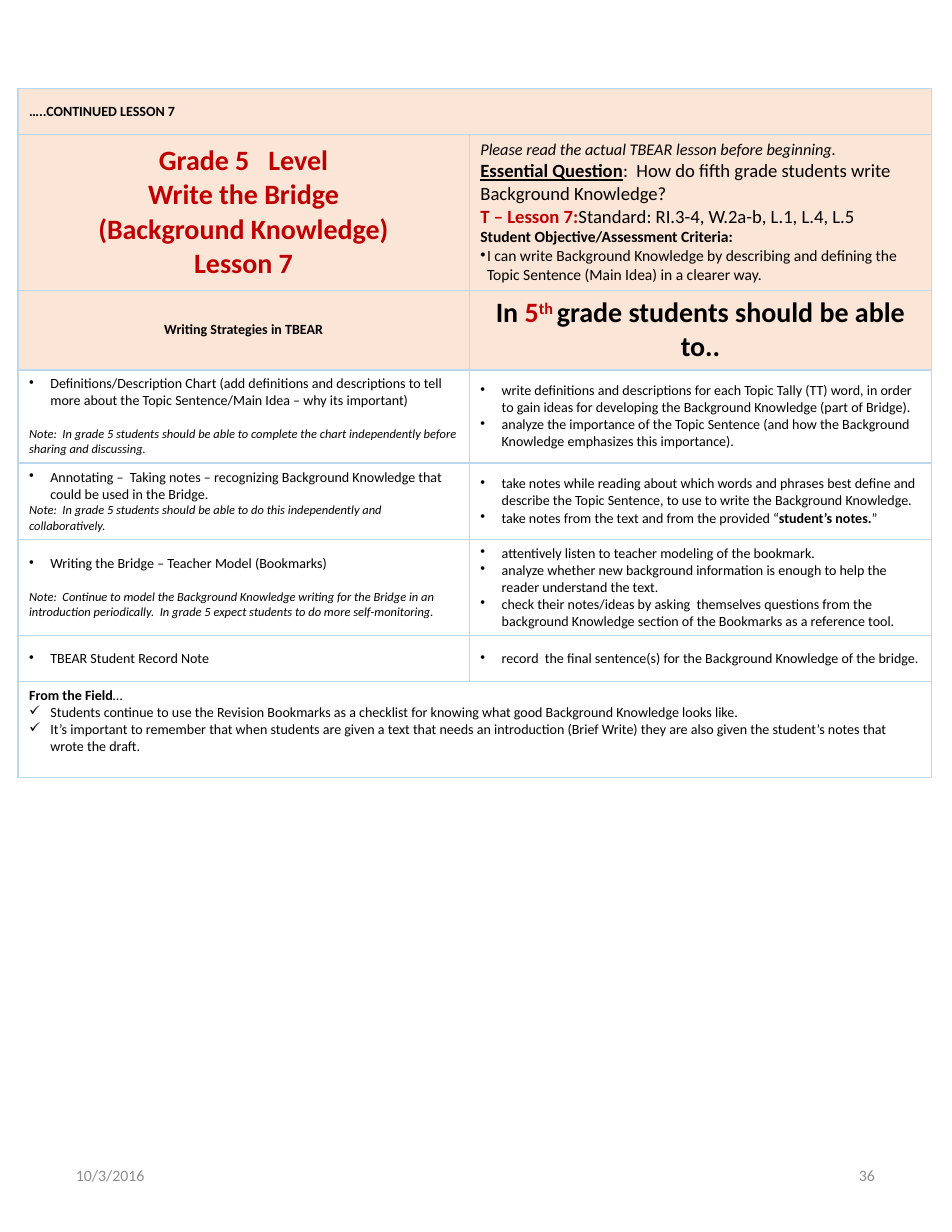
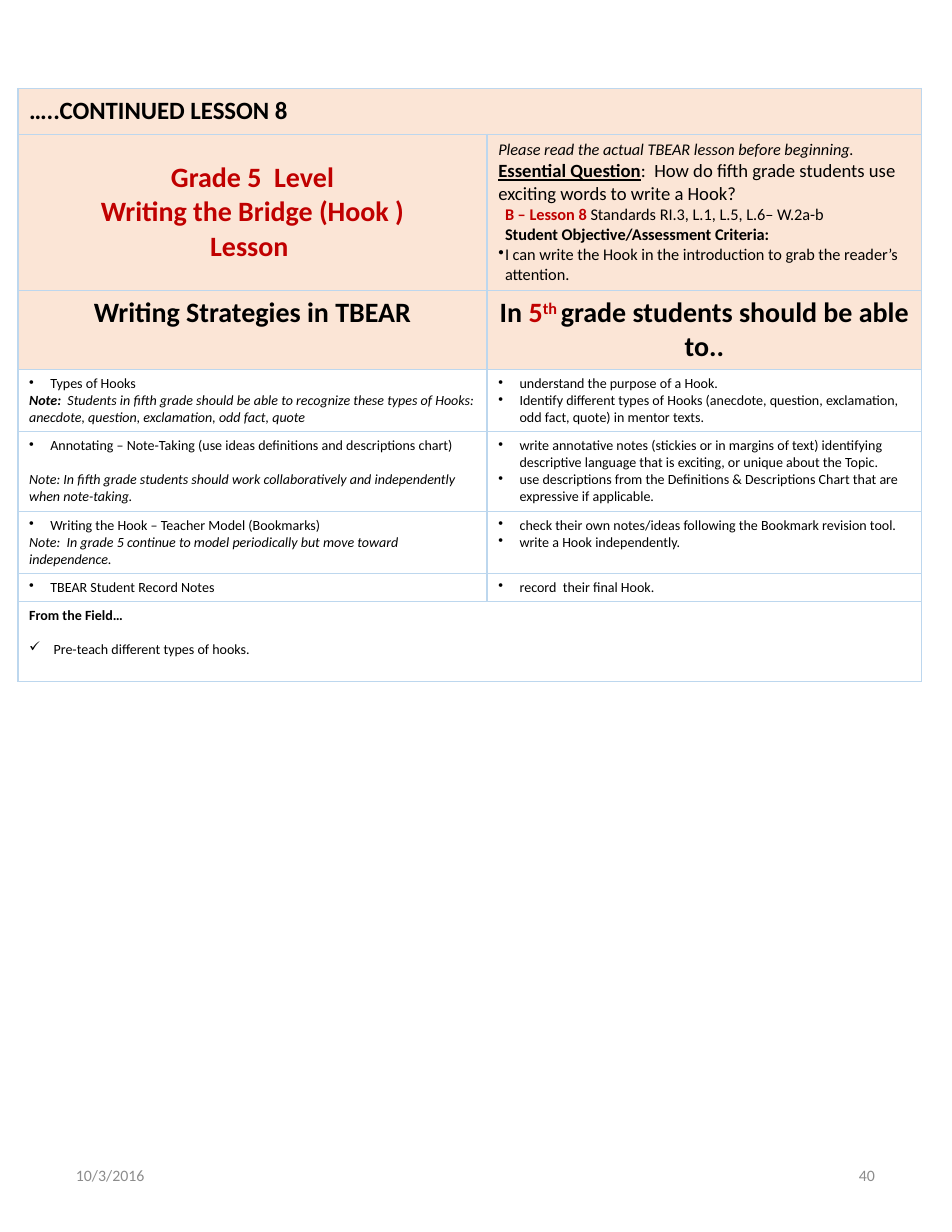
import pptx
import pptx.util
import pptx.oxml
import pptx.oxml.ns
import pptx.dml.color
import pptx.enum.text
import lxml.etree

Pt = pptx.util.Pt
Inches = pptx.util.Inches
RGBColor = pptx.dml.color.RGBColor
ALIGN = pptx.enum.text.PP_ALIGN
ANCHOR = pptx.enum.text.MSO_ANCHOR
qn = pptx.oxml.ns.qn

BLACK = RGBColor(0x00, 0x00, 0x00)
RED = RGBColor(0xC0, 0x00, 0x00)
GREY = RGBColor(0x8C, 0x8C, 0x8C)
PEACH = RGBColor(0xFB, 0xE5, 0xD6)
WHITE = RGBColor(0xFF, 0xFF, 0xFF)
BORDER = RGBColor(0xBD, 0xD7, 0xEE)

FONT = "Calibri"
PAGE_W, PAGE_H = Inches(8.5), Inches(11)
HEADER_ROWS = 3
HEADER_HEIGHTS = [3.73, 12.66, 6.45]
HANG = 0.19
LINE = 11


def col(n):
    return int(PAGE_W * n / 100)


def row(n):
    return int(PAGE_H * n / 100)


def run(text, **fmt):
    return text, fmt


def para(*runs, **fmt):
    return runs, fmt


def bullet(*runs, mark="•", left=HANG, **fmt):
    return para(*runs, mark=mark, left=left, first=-left, **fmt)


def check(text, **fmt):
    return bullet(text, mark="✓", **fmt)


def note(*runs, size=9, **fmt):
    return para(*runs, size=size, italic=True, **fmt)


def heading(*runs, size=18, **fmt):
    return para(*runs, size=size, bold=True, align=ALIGN.CENTER, **fmt)


def add_run(p, text, size=9, color=BLACK, bold=False, italic=False,
            underline=False, raised=False):
    r = p.add_run()
    r.text = text
    f = r.font
    f.name, f.size, f.bold, f.italic = FONT, Pt(size), bold, italic
    f.underline = underline
    f.color.rgb = color
    if raised:
        r._r.get_or_add_rPr().set("baseline", "30000")


def add_para(p, runs, align=ALIGN.LEFT, mark=None, left=0, first=0, before=0, **fmt):
    p.alignment = align
    p.space_before = Pt(before)
    pPr = p._p.get_or_add_pPr()
    pPr.set("marL", str(Inches(left)))
    pPr.set("indent", str(Inches(first)))
    if mark:
        lxml.etree.SubElement(pPr, qn("a:buChar")).set("char", mark)
    for item in runs:
        text, own = run(item) if isinstance(item, str) else item
        add_run(p, text, **{**fmt, **own})


def write(tf, paras):
    for i, (runs, fmt) in enumerate(paras):
        p = tf.add_paragraph() if i else tf.paragraphs[0]
        add_para(p, runs, **fmt)


def style_cell(cell, color):
    cell.fill.solid()
    cell.fill.fore_color.rgb = color
    tcPr = cell._tc.get_or_add_tcPr()
    for i, side in enumerate("LRTB"):
        ln = pptx.oxml.parse_xml(
            f'<a:ln{side} {pptx.oxml.ns.nsdecls("a")} w="{Pt(1)}"><a:solidFill>'
            f'<a:srgbClr val="{BORDER}"/></a:solidFill></a:ln{side}>')
        tcPr.insert(i, ln)


def lesson_table(s, box, split, heights, content, top_cells):
    x, y, w = box
    shape = s.shapes.add_table(len(content), 2, col(x), row(y), col(w), row(sum(heights)))
    table = shape.table
    table.first_row = table.horz_banding = False
    table.columns[0].width = col(split)
    table.columns[1].width = col(w - split)
    for i, (height, texts) in enumerate(zip(heights, content)):
        table.rows[i].height = row(height)
        for cell in table.rows[i].cells:
            style_cell(cell, PEACH if i < HEADER_ROWS else WHITE)
        if len(texts) == 1:
            table.cell(i, 0).merge(table.cell(i, 1))
        for j, paras in enumerate(texts):
            cell = table.cell(i, j)
            cell.vertical_anchor = ANCHOR.TOP if (i, j) in top_cells else ANCHOR.MIDDLE
            write(cell.text_frame, paras)


def footer(s, box, date, number):
    x, y, w, h = box
    part = 22.47
    for left, text, align in ((x, date, ALIGN.LEFT), (x + w - part, number, ALIGN.RIGHT)):
        tf = s.shapes.add_textbox(col(left), row(y), col(part), row(h)).text_frame
        tf.word_wrap = True
        tf.vertical_anchor = ANCHOR.MIDDLE
        write(tf, [para(text, size=10.2, color=GREY, align=align)])


def title_lines(*lines):
    return [heading(line, color=RED) for line in lines]


def question(text):
    return [
        note("Please read the actual TBEAR lesson before beginning.", size=10.5),
        para(run("Essential Question", bold=True, underline=True), ":  " + text, size=12),
    ]


def lesson_slide(prs, number, width, split, heights, content, top_cells):
    s = prs.slides.add_slide(prs.slide_layouts[6])
    lesson_table(s, (1.88, 7.18, width), split, HEADER_HEIGHTS + heights, content, top_cells)
    footer(s, (6.82, 92.73, 86.24, 5.36), "10/3/2016", number)


STRATEGIES = "Writing Strategies in TBEAR"
OBJECTIVE = "Student Objective/Assessment Criteria:"
EXPECTED = [heading("In ", run("5", color=RED), run("th ", color=RED, raised=True),
                    "grade students should be able to..")]

BACKGROUND_LESSON = [
    [[para("…..CONTINUED LESSON 7", bold=True)]],
    [title_lines("Grade 5   Level", "Write the Bridge", "(Background Knowledge)", "Lesson 7"),
     question("How do fifth grade students write Background Knowledge?") + [
         para(run("T – Lesson 7:", color=RED, bold=True),
              "Standard: RI.3-4, W.2a-b, L.1, L.4, L.5", size=12),
         para(OBJECTIVE, size=10, bold=True),
         bullet("I can write Background Knowledge by describing and defining the Topic "
                "Sentence (Main Idea) in a clearer way.", left=0.06, size=10)]],
    [[heading(STRATEGIES, size=9)], EXPECTED],
    [[bullet("Definitions/Description Chart (add definitions and descriptions to tell more "
             "about the Topic Sentence/Main Idea – why its important)"),
      note("Note:  In grade 5 students should be able to complete the chart independently "
           "before sharing and discussing.", size=8, before=LINE)],
     [bullet("write definitions and descriptions for each Topic Tally (TT) word, in order to "
             "gain ideas for developing the Background Knowledge (part of Bridge)."),
      bullet("analyze the importance of the Topic Sentence (and how the Background "
             "Knowledge emphasizes this importance).")]],
    [[bullet("Annotating –  Taking notes – recognizing Background Knowledge that could be "
             "used in the Bridge."),
      note("Note:  In grade 5 students should be able to do this independently and "
           "collaboratively.", size=8)],
     [bullet("take notes while reading about which words and phrases best define and "
             "describe the Topic Sentence, to use to write the Background Knowledge."),
      bullet("take notes from the text and from the provided “",
             run("student’s notes.", bold=True), "”")]],
    [[bullet("Writing the Bridge – Teacher Model (Bookmarks)"),
      note("Note:  Continue to model the Background Knowledge writing for the Bridge in an "
           "introduction periodically.  In grade 5 expect students to do more "
           "self-monitoring.", size=8, before=LINE)],
     [bullet("attentively listen to teacher modeling of the bookmark."),
      bullet("analyze whether new background information is enough to help the reader "
             "understand the text."),
      bullet("check their notes/ideas by asking  themselves questions from the background "
             "Knowledge section of the Bookmarks as a reference tool.")]],
    [[bullet("TBEAR Student Record Note")],
     [bullet("record  the final sentence(s) for the Background Knowledge of the bridge.")]],
    [[para(run("From the Field", bold=True), "…"),
      check("Students continue to use the Revision Bookmarks as a checklist for knowing what "
            "good Background Knowledge looks like."),
      check("It’s important to remember that when students are given a text that needs an "
            "introduction (Brief Write) they are also given the student’s notes that wrote "
            "the draft.")]],
]

HOOK_LESSON = [
    [[para("…..CONTINUED LESSON 8", size=16, bold=True)]],
    [title_lines("Grade 5  Level", "Writing the Bridge (Hook )", "Lesson "),
     question("How do fifth grade students use exciting words to write a Hook?") + [
         para(run("B – Lesson 8 ", color=RED, bold=True),
              "Standards RI.3, L.1, L.5, L.6– W.2a-b", size=10.5, first=0.06),
         para(OBJECTIVE, size=10.5, bold=True, first=0.06),
         bullet("I can write the Hook in the introduction to grab the reader’s attention.",
                left=0.06, size=10.5)]],
    [[heading(STRATEGIES)], EXPECTED],
    [[bullet("Types of Hooks"),
      note(run("Note:  ", bold=True),
           "Students in fifth grade should be able to recognize these types of Hooks: "
           "anecdote, question, exclamation, odd fact, quote")],
     [bullet("understand the purpose of a Hook."),
      bullet("Identify different types of Hooks (anecdote, question, exclamation, odd fact, "
             "quote) in mentor texts.")]],
    [[bullet("Annotating – Note-Taking (use ideas definitions and descriptions chart)"),
      note("Note: In fifth grade students should work collaboratively and independently "
           "when note-taking.", before=LINE)],
     [bullet("write annotative notes (stickies or in margins of text) identifying "
             "descriptive language that is exciting, or unique about the Topic."),
      bullet("use descriptions from the Definitions & Descriptions Chart that are "
             "expressive if applicable.")]],
    [[bullet("Writing the Hook – Teacher Model (Bookmarks)"),
      note("Note:  In grade 5 continue to model periodically but move toward independence.")],
     [bullet("check their own notes/ideas following the Bookmark revision tool."),
      bullet("write a Hook independently.")]],
    [[bullet("TBEAR Student Record Notes")], [bullet("record  their final Hook.")]],
    [[para("From the Field…", bold=True),
      check(" Pre-teach different types of hooks.", before=LINE)]],
]


def main():
    prs = pptx.Presentation()
    prs.slide_width, prs.slide_height = PAGE_W, PAGE_H
    lesson_slide(prs, "36", 96, 47.41, [7.51, 6.21, 7.75, 3.73, 7.79],
                 BACKGROUND_LESSON, {(7, 0)})
    lesson_slide(prs, "40", 94.94, 49.29, [5.03, 6.45, 5.03, 2.27, 6.49],
                 HOOK_LESSON, {(2, 0), (7, 0)} | {(i, 1) for i in range(2, 7)})
    prs.save("out.pptx")


if __name__ == "__main__":
    main()
